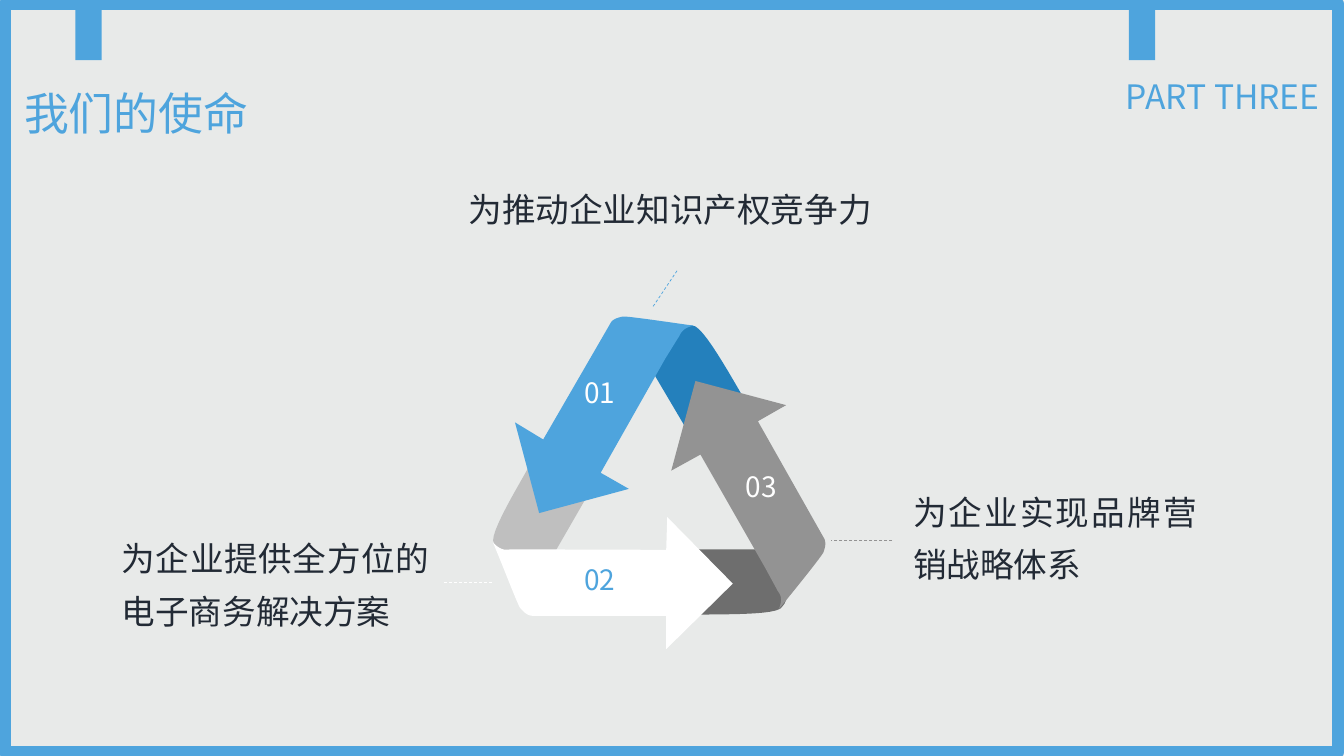
import pptx
import pptx.dml.color
import pptx.enum.dml
import pptx.enum.shapes
import pptx.enum.text
import pptx.oxml.ns
import pptx.util
from lxml import etree

Cm = pptx.util.Cm
Pt = pptx.util.Pt
RGBColor = pptx.dml.color.RGBColor
Align = pptx.enum.text.PP_ALIGN
Anchor = pptx.enum.text.MSO_ANCHOR
AutoSize = pptx.enum.text.MSO_AUTO_SIZE

BACKGROUND = RGBColor(0xE8, 0xEA, 0xE9)
BLUE = RGBColor(0x4E, 0xA4, 0xDD)
DEEP_BLUE = RGBColor(0x24, 0x80, 0xBC)
GRAY = RGBColor(0x93, 0x93, 0x93)
DARK_GRAY = RGBColor(0x6E, 0x6E, 0x6E)
LIGHT_GRAY = RGBColor(0xBF, 0xBF, 0xBF)
WHITE = RGBColor(0xFF, 0xFF, 0xFF)
INK = RGBColor(0x22, 0x2A, 0x35)

FONT = "Noto Sans CJK SC"
OUTLINE_UNIT = 0.0254
CURVE_STEPS = 12

HEADING = {"paragraph": {"line_spacing": 0.9, "space_before": Pt(10)},
           "frame": {"vertical_anchor": Anchor.MIDDLE}}
NUMBER = {"paragraph": {"alignment": Align.CENTER},
          "frame": {"auto_size": AutoSize.SHAPE_TO_FIT_TEXT}}
MISSION = {"paragraph": {"alignment": Align.JUSTIFY, "line_spacing": 1.3},
           "frame": {"auto_size": AutoSize.SHAPE_TO_FIT_TEXT}}

FOLDS = [
    (DEEP_BLUE, [(634, 346), (653, 336, 673, 320, 687, 323),
                 (697, 322, 725, 373, 742, 402), (686, 434)]),
    (DARK_GRAY, [(783, 545), (782, 565, 786, 592, 776, 602),
                 (772, 611, 713, 609, 680, 610), (680, 545)]),
    (LIGHT_GRAY, [(536, 573), (518, 562, 494, 552, 490, 539),
                  (484, 531, 515, 481, 531, 452), (587, 484.5)]),
]
ARROWS = [
    (BLUE, [(619, 314), (626, 314, 666, 320, 688, 323),
            (675, 326, 675, 333, 673, 335), (660, 356), (596, 469),
            (624, 485), (535, 509), (511, 419), (539, 436), (605, 322),
            (607, 318, 609, 316, 618, 314)]),
    (GRAY, [(690, 378), (780, 402), (752, 418), (817, 533),
            (819, 536, 820, 540, 817, 548), (816, 551, 788, 586, 773, 604),
            (778, 591, 772, 588, 771, 585), (759, 563), (695, 451),
            (666, 467)]),
    (WHITE, [(662, 513), (727, 579), (661, 644), (661, 611), (530, 611),
             (525, 611, 522, 610, 516, 603), (514, 601, 498, 559, 489, 538),
             (498, 548, 504, 545, 507, 545), (661, 545.5)]),
]
NUMBERS = [("01", 14.17, 9.35, WHITE), ("03", 18.24, 11.71, WHITE),
           ("02", 14.17, 14.05, BLUE)]
LEADERS = [(16.46, 7.72, 17.07, 6.81, BLUE),
           (12.4, 14.68, 11.18, 14.68, WHITE),
           (22.48, 13.61, 20.95, 13.61, GRAY)]
MISSIONS = [("为企业提供全方位的电子商务解决方案", (2.82, 13.13, 8.25, 2.92)),
            ("为推动企业知识产权竞争力", (11.56, 4.32, 11.1, 1.6)),
            ("为企业实现品牌营销战略体系", (22.76, 11.96, 7.65, 2.79))]


def assign(target, values):
    for name, value in values.items():
        setattr(target, name, value)


def trace(outline):
    points = [outline[0]]
    for segment in outline[1:]:
        if len(segment) == 2:
            points.append(segment)
            continue
        start = points[-1]
        for step in range(1, CURVE_STEPS + 1):
            t = step / CURVE_STEPS
            u = 1 - t
            points.append(tuple(
                u ** 3 * start[axis] + 3 * u * u * t * segment[axis]
                + 3 * u * t * t * segment[axis + 2] + t ** 3 * segment[axis + 4]
                for axis in (0, 1)))
    return [tuple(Cm(value * OUTLINE_UNIT) for value in point)
            for point in points]


class SlideBuilder:
    def __init__(self, slide):
        self.slide = slide
        self.font = FONT
        slide.background.fill.solid()
        slide.background.fill.fore_color.rgb = BACKGROUND

    def paint(self, shape, color):
        shape.shadow.inherit = False
        shape.fill.solid()
        shape.fill.fore_color.rgb = color
        shape.line.fill.background()

    def rectangle(self, box, color):
        shape = self.slide.shapes.add_shape(
            pptx.enum.shapes.MSO_SHAPE.RECTANGLE, *map(Cm, box))
        self.paint(shape, color)
        return shape

    def frame(self, box, color, width):
        shape = self.rectangle(box, color)
        shape.fill.background()
        shape.line.color.rgb = color
        shape.line.width = Pt(width)

    def outline(self, outline, color):
        start, *rest = trace(outline)
        builder = self.slide.shapes.build_freeform(*start)
        builder.add_line_segments(rest, close=True)
        self.paint(builder.convert_to_shape(), color)

    def leader(self, begin_x, begin_y, end_x, end_y, color):
        connector = self.slide.shapes.add_connector(
            pptx.enum.shapes.MSO_CONNECTOR.STRAIGHT,
            Cm(begin_x), Cm(begin_y), Cm(end_x), Cm(end_y))
        connector.line.color.rgb = color
        assign(connector.line, {
            "width": Pt(0.5),
            "dash_style": pptx.enum.dml.MSO_LINE.DASH})
        etree.SubElement(connector._element.spPr,
                         pptx.oxml.ns.qn("a:effectLst"))

    def text(self, text, box, size, color, style):
        shape = self.slide.shapes.add_textbox(*map(Cm, box))
        text_frame = shape.text_frame
        assign(text_frame, {"word_wrap": True, **style["frame"]})
        paragraph = text_frame.paragraphs[0]
        assign(paragraph, style["paragraph"])
        run = paragraph.add_run()
        run.text = text
        assign(run.font, {"name": self.font, "size": Pt(size)})
        run.font.color.rgb = color
        etree.SubElement(run.font._element, pptx.oxml.ns.qn("a:ea"),
                         typeface=self.font)


def main():
    presentation = pptx.Presentation()
    presentation.slide_width = Cm(33.87)
    presentation.slide_height = Cm(19.05)
    slide = presentation.slides.add_slide(presentation.slide_layouts[6])
    builder = SlideBuilder(slide)

    builder.frame((0.13, 0.1, 33.6, 18.85), BLUE, 8.5)
    for tab_left in (1.9, 28.45):
        builder.rectangle((tab_left, 0.1, 0.66, 1.42), BLUE)
    builder.text("PART THREE", (28.12, 1.83, 5.75, 1.3), 24, BLUE, HEADING)
    builder.text("我们的使命", (0.36, 2.21, 17.7, 1.42), 32, BLUE, HEADING)

    for color, outline in FOLDS + ARROWS:
        builder.outline(outline, color)
    for number, left, top, color in NUMBERS:
        builder.text(number, (left, top, 1.9, 1.24), 20, color, NUMBER)
    for leader in LEADERS:
        builder.leader(*leader)
    for mission, box in MISSIONS:
        builder.text(mission, box, 24, INK, MISSION)

    presentation.save("out.pptx")


if __name__ == "__main__":
    main()
